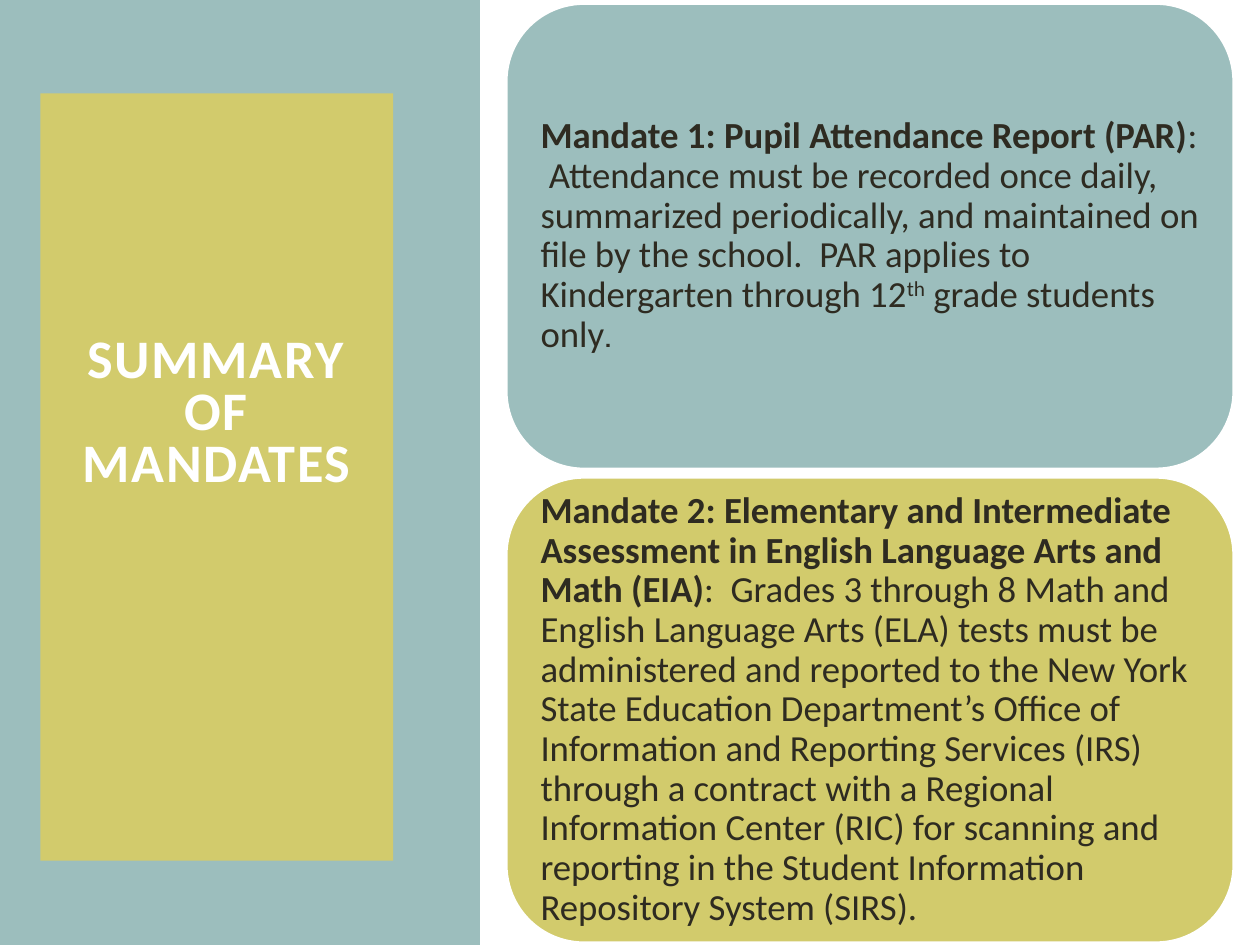
"""Build the summary of mandates slide."""
from pptx import Presentation
from pptx.dml.color import RGBColor
from pptx.enum.shapes import MSO_SHAPE as Shape
from pptx.enum.text import MSO_ANCHOR as Anchor, PP_ALIGN as Align
from pptx.util import Inches, Pt

TEAL = RGBColor(0x9C, 0xBE, 0xBD)
LIME = RGBColor(0xD2, 0xCB, 0x6C)
WHITE = RGBColor(0xFF, 0xFF, 0xFF)
DARK = RGBColor(0x2E, 0x2B, 0x21)


def add_panel(kind, left, top, width, height, fill):
    panel = slide.shapes.add_shape(
        kind, Inches(left), Inches(top), Inches(width), Inches(height))
    panel.shadow.inherit = False
    panel.fill.solid()
    panel.fill.fore_color.rgb = fill
    panel.line.fill.background()
    frame = panel.text_frame
    frame.word_wrap = True
    frame.vertical_anchor = Anchor.MIDDLE
    return panel


def add_text(para, text, size=21, color=DARK, bold=False, font="Calibri", **attrs):
    run = para.add_run()
    run.text = text
    run.font.name = font
    run.font.size = Pt(size)
    run.font.bold = bold
    run.font.color.rgb = color
    for name, value in attrs.items():
        run._r.get_or_add_rPr().set(name, value)


prs = Presentation()
prs.slide_width = Inches(10)
prs.slide_height = Inches(7.5)
slide = prs.slides.add_slide(prs.slide_layouts[6])

add_panel(Shape.RECTANGLE, 0, 0, 3.81, 7.5, TEAL)
title = add_panel(Shape.RECTANGLE, 0.32, 0.74, 2.8, 6.09, LIME)
title.text_frame.margin_bottom = Inches(1.03)
para = title.text_frame.paragraphs[0]
para.alignment = Align.CENTER
para.line_spacing = 0.8
add_text(para, "SUMMARY OF MANDATES", size=31, color=WHITE, bold=True, spc="100")

mandates = [
    (TEAL, [
        ("Mandate 1: Pupil Attendance Report (PAR)", {"bold": True}),
        (":  Attendance must be recorded once daily, summarized periodically, "
         "and maintained on file by the school.  PAR applies to Kindergarten "
         "through 12", {}),
        ("th", {"baseline": "30000"}),
        (" grade students only", {}),
        (".", {"font": "Cabin"}),
    ]),
    (LIME, [
        ("Mandate 2: Elementary and Intermediate Assessment in English "
         "Language Arts and Math (EIA)", {"bold": True}),
        (":  Grades 3 through 8 Math and English Language Arts (ELA) tests "
         "must be administered and reported to the New York State Education "
         "Department’s Office of Information and Reporting Services (IRS) "
         "through a contract with a Regional Information Center (RIC) for "
         "scanning and reporting in the Student Information Repository "
         "System (SIRS).", {}),
    ]),
]
for row, (fill, parts) in enumerate(mandates):
    card = add_panel(Shape.ROUNDED_RECTANGLE, 4.02, 0.03 + row * 3.76, 5.77, 3.69, fill)
    card.line.color.rgb = WHITE
    card.line.width = Pt(1.25)
    frame = card.text_frame
    frame.margin_left = frame.margin_right = Inches(0.09)
    frame.margin_top = frame.margin_bottom = Inches(0.09)
    para = frame.paragraphs[0]
    para.alignment = Align.LEFT
    para.line_spacing = 0.9
    for text, style in parts:
        add_text(para, text, **style)

prs.save("out.pptx")
